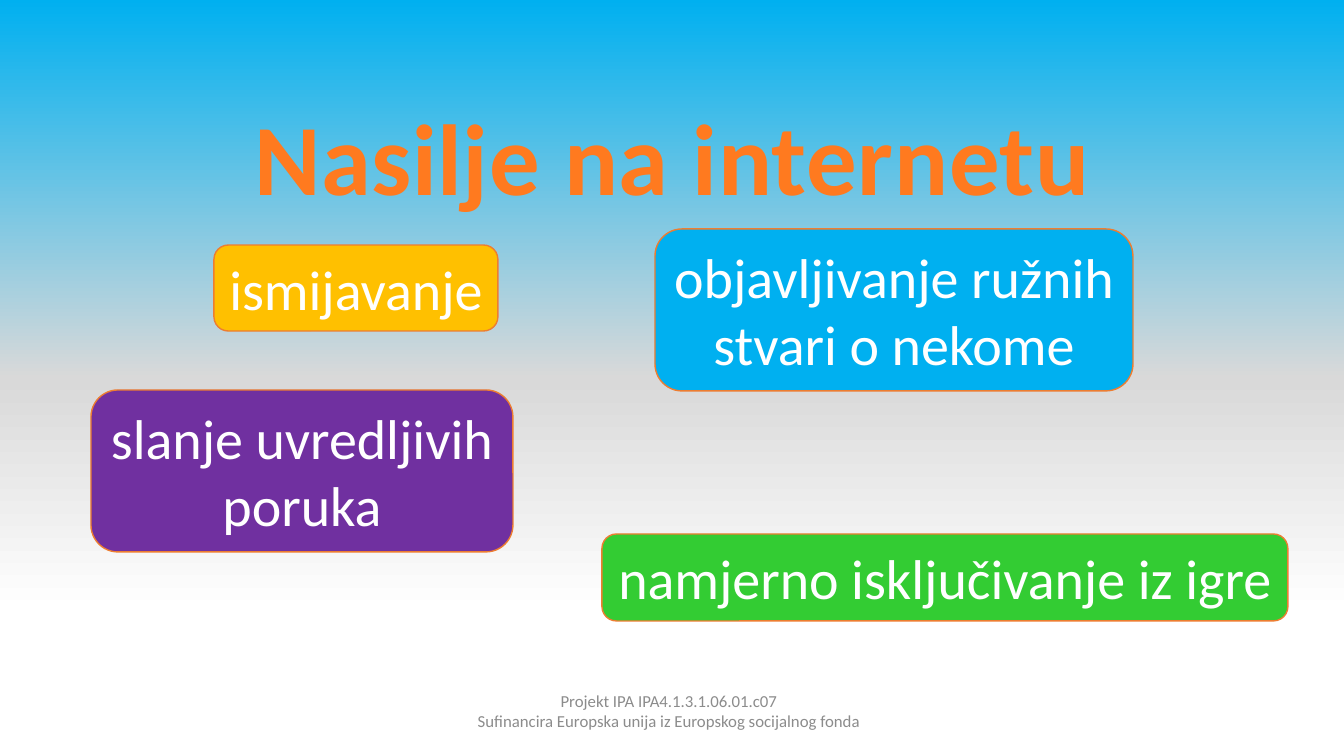
import pptx
import pptx.dml.color
import pptx.enum.shapes
import pptx.enum.text
import pptx.oxml
import pptx.oxml.ns
import pptx.util

# Content: boxes are (left, top, width, height) in px
SLIDE = (1344, 756)
SKY = [(0, "00B0F0"), (50, "D9D9D9"), (81, "FFFFFF")]
TITLE = ("Nasilje na internetu", (219, 94, 907, 122))
TITLE_ORANGE = [(25, "FF7A1F"), (100, "CA5200")]
EXAMPLES = [
    (["ismijavanje"], "FFC000", (214, 245, 284, 86)),
    (["slanje uvredljivih", "poruka"], "7030A0", (91, 390, 422, 162)),
    (["objavljivanje ružnih", "stvari o nekome"], "00B0F0", (655, 229, 478, 162)),
    (["namjerno isključivanje iz igre"], "33CC33", (602, 534, 686, 87)),
]
FOOTER = (["Projekt IPA IPA4.1.3.1.06.01.c07",
           "Sufinancira Europska unija iz Europskog socijalnog fonda"],
          (442, 691, 454, 40))
FONT = "Calibri"
OUTLINE = "ED7D31"


def px(n):
    return pptx.util.Emu(round(n * 914400 / 100.8))


def color(value):
    return pptx.dml.color.RGBColor.from_string(value)


def set_gradient(fill, parent, stops):
    """Fill with a top-to-bottom gradient of any number of stops."""
    fill.gradient()
    fill.gradient_angle = 270
    stop_list = parent.find(".//" + pptx.oxml.ns.qn("a:gsLst"))
    for old in list(stop_list):
        stop_list.remove(old)
    for percent, value in stops:
        stop_list.append(pptx.oxml.parse_xml(
            f'<a:gs {pptx.oxml.ns.nsdecls("a")} pos="{percent * 1000}">'
            f'<a:srgbClr val="{value}"/></a:gs>'))


def write(sp, lines, size, value, bold=None, wrap=False):
    """Write centred lines, one paragraph each; return the last run."""
    tf = sp.text_frame
    tf.word_wrap = wrap
    tf.vertical_anchor = pptx.enum.text.MSO_ANCHOR.MIDDLE
    if not wrap:
        tf.auto_size = pptx.enum.text.MSO_AUTO_SIZE.SHAPE_TO_FIT_TEXT
    for i, line in enumerate(lines):
        p = tf.paragraphs[0] if i == 0 else tf.add_paragraph()
        p.alignment = pptx.enum.text.PP_ALIGN.CENTER
        r = p.add_run()
        r.text = line
        r.font.name = FONT
        r.font.size = pptx.util.Pt(size)
        r.font.bold = bold
        r.font.color.rgb = color(value)
    return r


prs = pptx.Presentation()
prs.slide_width, prs.slide_height = map(px, SLIDE)
s = prs.slides.add_slide(prs.slide_layouts[6])

# Background
set_gradient(s.background.fill, s.element, SKY)

# Footer
lines, box = FOOTER
sp = s.shapes.add_textbox(*map(px, box))
tf = sp.text_frame
tf.margin_top = tf.margin_bottom = 0
write(sp, lines, 12, "8C8C8C", wrap=True)

# Title
text, box = TITLE
sp = s.shapes.add_textbox(*map(px, box))
r = write(sp, [text], 72, TITLE_ORANGE[0][1], bold=True)
set_gradient(r.font.fill, sp.element, TITLE_ORANGE)
r._r.get_or_add_rPr().set("spc", "50")

# Examples of online violence
for lines, fill, box in EXAMPLES:
    sp = s.shapes.add_shape(
        pptx.enum.shapes.MSO_SHAPE.ROUNDED_RECTANGLE, *map(px, box))
    sp.shadow.inherit = False
    sp.fill.solid()
    sp.fill.fore_color.rgb = color(fill)
    sp.line.color.rgb = color(OUTLINE)
    sp.line.width = pptx.util.Pt(1)
    write(sp, lines, 40, "FFFFFF")

prs.save("out.pptx")
